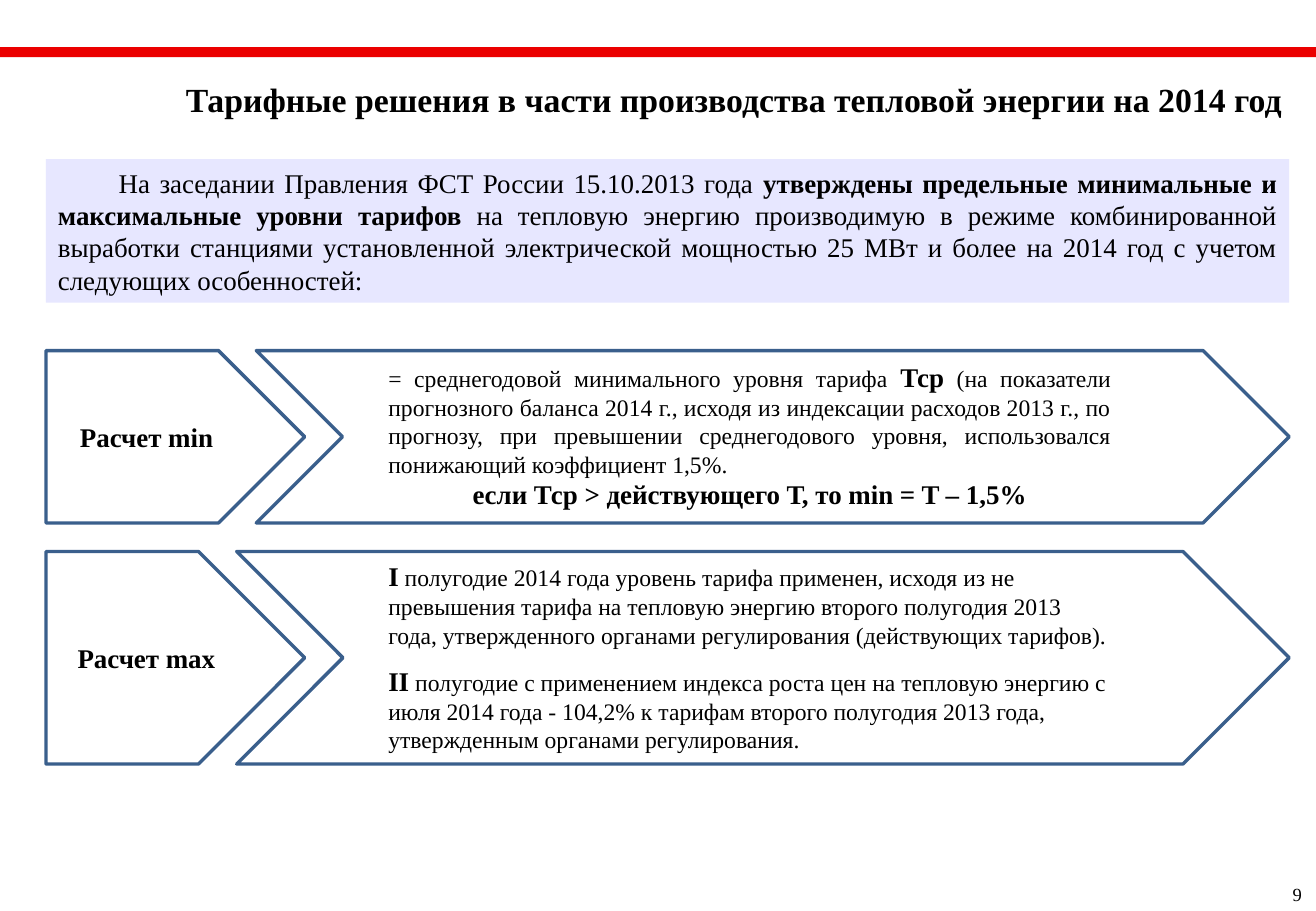
from dataclasses import dataclass

from pptx import Presentation
from pptx.dml.color import RGBColor
from pptx.enum.shapes import MSO_SHAPE as Preset
from pptx.enum.text import MSO_ANCHOR as Anchor, PP_ALIGN as Align
from pptx.util import Pt


@dataclass(frozen=True)
class Theme:
    font: str = "Times New Roman"
    text: RGBColor = RGBColor(0, 0, 0)
    accent: RGBColor = RGBColor(0xEB, 0x00, 0x00)
    panel: RGBColor = RGBColor(0xE7, 0xE7, 0xFF)
    outline: RGBColor = RGBColor(0x3A, 0x5F, 0x8C)
    title_size: int = 20
    strong_size: int = 16
    detail_size: int = 14
    number_size: int = 11


class TariffSlide:
    def __init__(self, deck, theme):
        self.theme = theme
        self.slide = deck.slides.add_slide(deck.slide_layouts[5])

    def fill_text(self, frame, paragraphs, size, wrap=True, anchor=Anchor.TOP):
        frame.word_wrap = wrap
        frame.vertical_anchor = anchor
        for index, (runs, align, space) in enumerate(paragraphs):
            paragraph = frame.add_paragraph() if index else frame.paragraphs[0]
            paragraph.alignment = align
            paragraph.space_before = Pt(space)
            paragraph.font.name = self.theme.font
            paragraph.font.color.rgb = self.theme.text
            agree = len({run[1:] for run in runs}) == 1
            for words, bold, run_size in runs:
                run = paragraph.add_run()
                run.text = words
                font = paragraph.font if agree else run.font
                font.bold = bold
                font.size = Pt(run_size or size)

    def title(self, words, box):
        title = self.slide.shapes.title
        title.left, title.top, title.width, title.height = map(Pt, box)
        runs = [(words, True, None)]
        self.fill_text(title.text_frame, [(runs, Align.CENTER, 0)], self.theme.title_size)

    def text(self, paragraphs, box, size, wrap=True):
        frame = self.slide.shapes.add_textbox(*map(Pt, box)).text_frame
        self.fill_text(frame, paragraphs, size, wrap)

    def block(self, color, box):
        block = self.slide.shapes.add_shape(Preset.RECTANGLE, *map(Pt, box))
        block.shadow.inherit = False
        block.fill.solid()
        block.fill.fore_color.rgb = color
        block.line.fill.background()
        return block

    def panel(self, runs, box, first_indent):
        frame = self.block(self.theme.panel, box).text_frame
        self.fill_text(frame, [(runs, Align.JUSTIFY, 0)], self.theme.strong_size,
                       anchor=Anchor.MIDDLE)
        properties = frame.paragraphs[0]._p.get_or_add_pPr()
        properties.set("marL", "0")
        properties.set("indent", str(Pt(first_indent)))

    def arrow(self, preset, box):
        arrow = self.slide.shapes.add_shape(preset, *map(Pt, box))
        arrow.shadow.inherit = False
        arrow.fill.background()
        arrow.line.color.rgb = self.theme.outline
        arrow.line.width = Pt(2)


def main():
    theme = Theme()
    deck = Presentation()
    deck.slide_width, deck.slide_height = Pt(780.48), Pt(540)
    page = TariffSlide(deck, theme)
    left, right = 27.3, 764.6
    strong = theme.strong_size

    page.block(theme.accent, (0, 28, 780.48, 5.8))
    page.panel([
        ("На заседании Правления ФСТ России 15.10.2013 года ", False, None),
        ("утверждены предельные минимальные и максимальные уровни тарифов", True, None),
        (" на тепловую энергию производимую в режиме комбинированной выработки "
         "станциями установленной электрической мощностью 25 МВт и более на 2014 год "
         "с учетом следующих особенностей:", False, None),
    ], (left, 94.4, right - left, 85), 36)
    page.title("Тарифные решения в части производства тепловой энергии на 2014 год",
               (91, 43.2, 689, 39.6))
    page.text([([("9", False, None)], Align.LEFT, 0)],
              (759.6, 519.6, 20.2, 20.4), theme.number_size, wrap=False)

    minimum = [
        ([("= среднегодовой минимального уровня тарифа ", False, None),
          ("Тср", True, strong),
          (" (на показатели прогнозного баланса 2014 г., исходя из индексации расходов "
           "2013 г., по прогнозу, при превышении среднегодового уровня, использовался "
           "понижающий коэффициент 1,5%.", False, None)], Align.JUSTIFY, 0),
        ([("если Тср > действующего Т, то min = T – 1,5%", True, strong)],
         Align.CENTER, 0),
    ]
    maximum = [
        ([("I", True, strong),
          (" полугодие 2014 года уровень тарифа применен, исходя из не превышения тарифа "
           "на тепловую энергию второго полугодия 2013 года, утвержденного органами "
           "регулирования (действующих тарифов).", False, None)], Align.LEFT, 0),
        ([("II", True, strong),
          (" полугодие с применением индекса роста цен на тепловую энергию с июля 2014 "
           "года - 104,2% к тарифам второго полугодия 2013 года, утвержденным органами "
           "регулирования.", False, None)], Align.LEFT, 9),
    ]
    calculations = [
        ("Расчет min", 207.8, 102.2, 152, (40.3, 94.3), minimum, 210.2),
        ("Расчет max", 326.9, 126, 140.4, (38.9, 97.2), maximum, 328.3),
    ]
    for name, top, height, chevron_left, label, details, details_top in calculations:
        label_left, label_width = label
        page.arrow(Preset.PENTAGON, (left, top, 153.4, height))
        page.arrow(Preset.CHEVRON, (chevron_left, top, right - chevron_left, height))
        page.text([([(name, True, None)], Align.LEFT, 0)],
                  (label_left, top + height / 2 - 13.3, label_width, 26.6),
                  strong, wrap=False)
        page.text(details, (223.2, details_top, 442.8, height - 3), theme.detail_size)

    deck.save("out.pptx")


if __name__ == "__main__":
    main()
